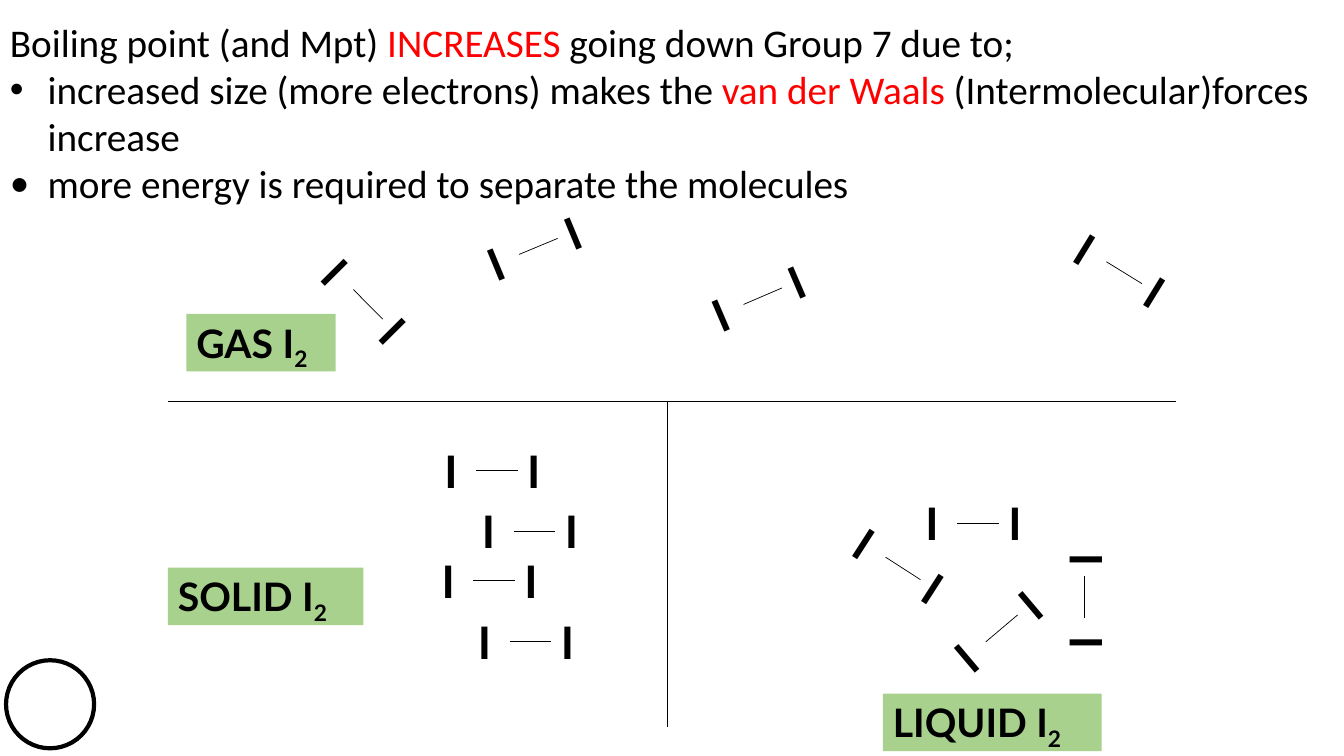
"""Build a slide on halogen boiling points with iodine as gas, solid and liquid."""
from math import cos, radians, sin

from lxml.etree import SubElement
from pptx import Presentation
from pptx.dml.color import RGBColor
from pptx.enum.shapes import MSO_CONNECTOR, MSO_SHAPE
from pptx.enum.text import MSO_AUTO_SIZE
from pptx.oxml.ns import qn
from pptx.util import Pt

BLACK = RGBColor(0x00, 0x00, 0x00)
WHITE = RGBColor(0xFF, 0xFF, 0xFF)
RED = RGBColor(0xFF, 0x00, 0x00)
GREEN = RGBColor(0xA9, 0xD1, 0x8E)

LETTER_WIDTH, LETTER_HEIGHT = 30.2, 46
LETTER_REACH = 29.6
BOND_REACH = 14.9


def add_span(para, text, size, colour=BLACK, font="Lato", bold=True):
    span = para.add_run()
    span.text = text
    span.font.size = Pt(size)
    span.font.name = font
    span.font.bold = bold
    span.font.color.rgb = colour
    return span


def add_line(x1, y1, x2, y2):
    line = page.shapes.add_connector(
        MSO_CONNECTOR.STRAIGHT, Pt(x1), Pt(y1), Pt(x2), Pt(y2))
    line.line.color.rgb = BLACK
    line.line.width = Pt(0.5)
    SubElement(line._element.spPr, qn("a:effectLst"))


deck = Presentation()
deck.slide_width, deck.slide_height = Pt(960), Pt(540)
page = deck.slides.add_slide(deck.slide_layouts[6])

circle = page.shapes.add_shape(MSO_SHAPE.OVAL, Pt(4.3), Pt(471.6), Pt(62.9), Pt(62.9))
circle.shadow.inherit = False
circle.fill.solid()
circle.fill.fore_color.rgb = WHITE
circle.line.color.rgb = BLACK
circle.line.width = Pt(3)

solid = [(355, 336.2, 0), (381.8, 379.4, 0), (353, 414.7, 0), (379, 458.4, 0)]
liquid = [(698.6, 373.7, 0), (715.5, 448.9, -40.2), (645, 406, 32.8), (774.7, 426.2, -90)]
gas = [(384.6, 176, -22.5), (544.8, 211.6, -23.2), (262.9, 217.4, 45.2), (803, 194.8, 31.6)]

for x, y, angle in solid + liquid + gas:
    across, down = cos(radians(angle)), sin(radians(angle))
    add_line(x - BOND_REACH * across, y - BOND_REACH * down,
             x + BOND_REACH * across, y + BOND_REACH * down)
    for reach in (-LETTER_REACH, LETTER_REACH):
        box = page.shapes.add_textbox(
            Pt(x + reach * across - LETTER_WIDTH / 2),
            Pt(y + reach * down - LETTER_HEIGHT / 2),
            Pt(LETTER_WIDTH), Pt(LETTER_HEIGHT))
        box.rotation = angle
        box.text_frame.word_wrap = False
        box.text_frame.auto_size = MSO_AUTO_SIZE.SHAPE_TO_FIT_TEXT
        add_span(box.text_frame.paragraphs[0], "I", 32)

add_line(120, 287, 840, 287)
add_line(476.6, 287, 476.6, 519)

for state, left, top, width in [("SOLID I", 120, 405.4, 139.7),
                                ("LIQUID I", 630.7, 495.4, 156.2),
                                ("GAS I", 133.2, 224.2, 106.6)]:
    label = page.shapes.add_textbox(Pt(left), Pt(top), Pt(width), Pt(41.2))
    label.fill.solid()
    label.fill.fore_color.rgb = GREEN
    label.text_frame.word_wrap = False
    label.text_frame.auto_size = MSO_AUTO_SIZE.SHAPE_TO_FIT_TEXT
    para = label.text_frame.paragraphs[0]
    add_span(para, state, 28)
    subscript = add_span(para, "2", 28)
    subscript.font._element.set("baseline", "-25000")

explanation = [
    (None, [("Boiling point (and Mpt) ", BLACK), ("INCREASES", RED),
            (" going down Group 7 due to;", BLACK)]),
    ("Arial", [("increased size (more electrons) makes the ", BLACK),
               ("van der Waals ", RED), ("(Intermolecular)forces increase", BLACK)]),
    ("Calibri", [("more energy is required to separate the molecules", BLACK)]),
]
box = page.shapes.add_textbox(Pt(0), Pt(9.4), Pt(956), Pt(143.5))
frame = box.text_frame
frame.word_wrap = True
frame.auto_size = MSO_AUTO_SIZE.SHAPE_TO_FIT_TEXT
for index, (bullet_font, spans) in enumerate(explanation):
    para = frame.add_paragraph() if index else frame.paragraphs[0]
    if bullet_font:
        properties = para._p.get_or_add_pPr()
        properties.set("marL", str(Pt(27)))
        properties.set("indent", str(Pt(-27)))
        SubElement(properties, qn("a:buFont"), typeface=bullet_font)
        SubElement(properties, qn("a:buChar"), char="•")
    for text, colour in spans:
        add_span(para, text, 28, colour, "Calibri", False)

deck.save("out.pptx")
